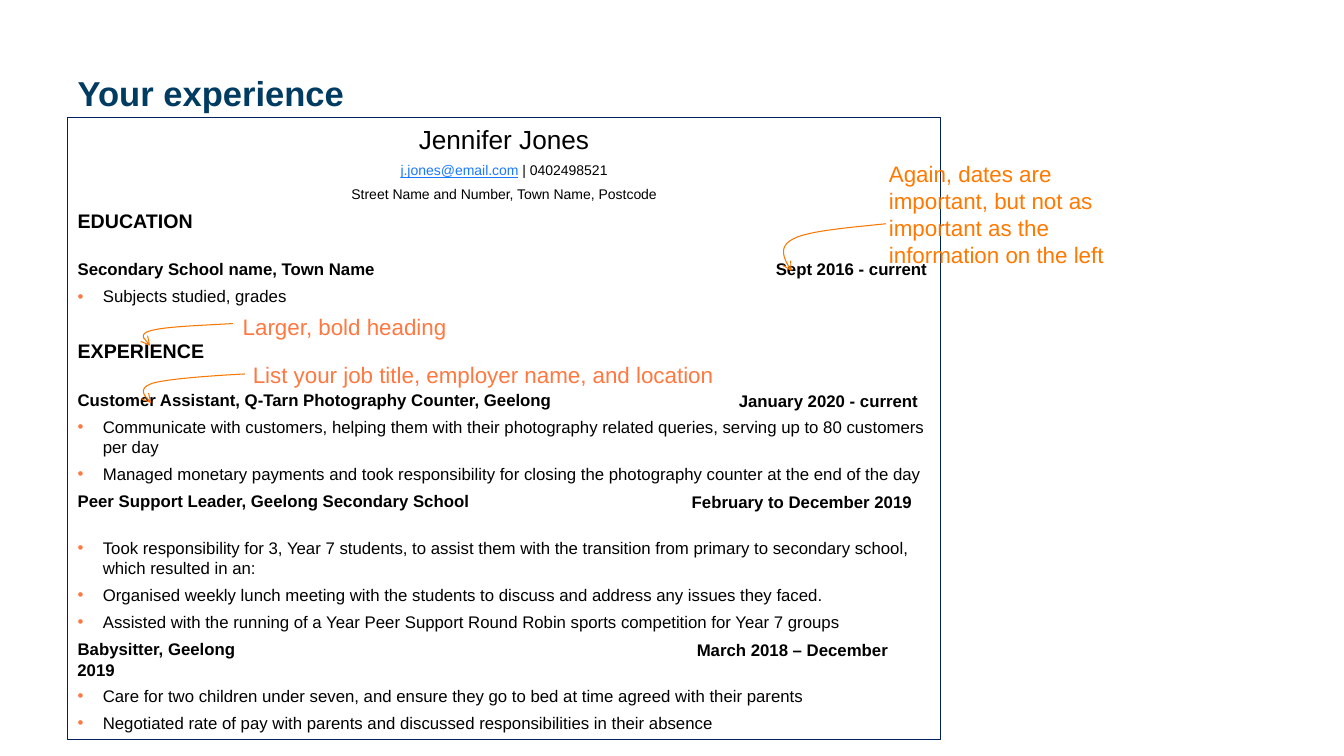
from dataclasses import dataclass

from lxml import etree
from pptx import Presentation
from pptx.dml.color import RGBColor
from pptx.enum import text
from pptx.oxml import ns
from pptx.util import Pt


@dataclass(frozen=True)
class Theme:
    font: str = "Arial"
    title: str = "003B61"
    ink: str = "000000"
    frame: str = "002060"
    email: str = "1979FF"
    bullet: str = "FF7840"
    note: str = "FF7840"
    date_note: str = "FF7900"
    arrow: str = "F97600"
    title_size: float = 24.7
    name_size: float = 18.7
    contact_size: float = 10
    heading_size: float = 14
    entry_size: float = 12
    note_size: float = 16
    line: float = 0.75
    gap: float = 4.95
    heading_gap: float = 19
    section_gap: float = 23.6
    line_gap: float = 18.8
    indent: float = 18


def apply(target, values):
    for name, value in values.items():
        setattr(target, name, value)


def add_xml(parent, tag, **attributes):
    return etree.SubElement(parent, ns.qn(tag), attributes)


def bezier(start, first, second, end, steps=12):
    """Return the points of a cubic curve after its start."""
    points = []
    for step in range(1, steps + 1):
        t = step / steps
        weights = ((1 - t) ** 3, 3 * t * (1 - t) ** 2, 3 * t * t * (1 - t), t ** 3)
        points.append(tuple(
            Pt(sum(w * p[axis] for w, p in zip(weights, (start, first, second, end))))
            for axis in (0, 1)))
    return points


class ResumePage:
    def __init__(self, deck, theme):
        self.theme = theme
        self.page = deck.slides.add_slide(deck.slide_layouts[1])
        self.resume = self.page.placeholders[1]
        self.paragraph_count = 0

    def place(self, box, left, top, width, height, anchor=text.MSO_ANCHOR.TOP):
        apply(box, {"left": Pt(left), "top": Pt(top),
                    "width": Pt(width), "height": Pt(height)})
        apply(box.text_frame, {"word_wrap": True, "vertical_anchor": anchor,
                               "auto_size": text.MSO_AUTO_SIZE.NONE})

    def span(self, para, words, size, color, bold=False, underline=False):
        span = para.add_run()
        span.text = words
        apply(span.font, {"name": self.theme.font, "size": Pt(size),
                          "bold": bold, "underline": underline})
        span.font.color.rgb = RGBColor.from_string(color)

    def title(self, words, *place):
        box = self.page.shapes.title
        self.place(box, *place, text.MSO_ANCHOR.MIDDLE)
        para = box.text_frame.paragraphs[0]
        para.alignment = text.PP_ALIGN.LEFT
        self.span(para, words, self.theme.title_size, self.theme.title, bold=True)

    def frame(self, *place):
        self.place(self.resume, *place)
        self.resume.line.color.rgb = RGBColor.from_string(self.theme.frame)
        self.resume.line.width = Pt(self.theme.line)

    def paragraph(self, before=None, align=text.PP_ALIGN.LEFT, bullet=False):
        frame = self.resume.text_frame
        first = self.paragraph_count == 0
        para = frame.paragraphs[0] if first else frame.add_paragraph()
        self.paragraph_count += 1
        space = self.theme.gap if before is None else before
        apply(para, {"alignment": align, "space_before": Pt(0 if first else space)})
        indent = Pt(self.theme.indent) if bullet else 0
        properties = para._p.get_or_add_pPr()
        properties.set("marL", str(indent))
        properties.set("indent", str(-indent))
        if bullet:
            color = add_xml(properties, "a:buClr")
            add_xml(color, "a:srgbClr", val=self.theme.bullet)
            add_xml(properties, "a:buFont", typeface=self.theme.font)
            add_xml(properties, "a:buChar", char="•")
        else:
            add_xml(properties, "a:buNone")
        return para

    def contact(self, name, email, phone, address):
        theme = self.theme
        center = text.PP_ALIGN.CENTER
        self.span(self.paragraph(align=center), name, theme.name_size, theme.ink)
        para = self.paragraph(align=center)
        self.span(para, email, theme.contact_size, theme.email, underline=True)
        self.span(para, f" | {phone}", theme.contact_size, theme.ink)
        self.span(self.paragraph(align=center), address, theme.contact_size, theme.ink)

    def heading(self, words, before=None):
        self.span(self.paragraph(before), words,
                  self.theme.heading_size, self.theme.ink, bold=True)

    def entry(self, role, bullets, before=None, bullets_before=None):
        theme = self.theme
        self.span(self.paragraph(before), role, theme.entry_size, theme.ink, bold=True)
        for index, words in enumerate(bullets):
            para = self.paragraph(None if index else bullets_before, bullet=True)
            self.span(para, words, theme.entry_size, theme.ink)

    def dates(self, lines, left, top):
        """Put dates on an entry's row; further lines return to the frame's left edge."""
        theme = self.theme
        box = self.page.shapes.add_textbox(0, 0, 0, 0)
        self.place(box, 48.24, top, 623.52, 7.2 + 13.8 * len(lines))
        para = box.text_frame.paragraphs[0]
        properties = para._p.get_or_add_pPr()
        properties.set("marL", "0")
        properties.set("indent", str(Pt(left)))
        for index, line in enumerate(lines):
            if index:
                para.add_line_break()
            self.span(para, line, theme.entry_size, theme.ink, bold=True)

    def note(self, words, color, *place):
        box = self.page.shapes.add_textbox(0, 0, 0, 0)
        self.place(box, *place)
        self.span(box.text_frame.paragraphs[0], words, self.theme.note_size, color)

    def arrow(self, tip, *curve):
        """Draw two joined curves with an arrowhead at the tip."""
        points = bezier(tip, *curve[:3]) + bezier(*curve[2:])
        builder = self.page.shapes.build_freeform(Pt(tip[0]), Pt(tip[1]))
        builder.add_line_segments(points, close=False)
        arrow = builder.convert_to_shape()
        arrow.shadow.inherit = False
        arrow.fill.background()
        arrow.line.color.rgb = RGBColor.from_string(self.theme.arrow)
        arrow.line.width = Pt(self.theme.line)
        add_xml(arrow.line._get_or_add_ln(), "a:headEnd", type="arrow")


def main():
    deck = Presentation()
    apply(deck, {"slide_width": Pt(960), "slide_height": Pt(540)})
    theme = Theme()
    page = ResumePage(deck, theme)

    page.title("Your experience", 48.24, 20.88, 722.16, 90)
    page.frame(48.24, 84.24, 623.52, 444.24)
    page.contact("Jennifer Jones", "j.jones@email.com", "0402498521",
                 "Street Name and Number, Town Name, Postcode")
    page.heading("EDUCATION")
    page.entry("Secondary School name, Town Name",
               ["Subjects studied, grades"], before=theme.heading_gap)
    page.heading("EXPERIENCE", before=theme.section_gap)
    page.entry("Customer Assistant, Q-Tarn Photography Counter, Geelong", [
        "Communicate with customers, helping them with their photography "
        "related queries, serving up to 80 customers per day",
        "Managed monetary payments and took responsibility for closing the "
        "photography counter at the end of the day",
    ], before=theme.heading_gap)
    page.entry("Peer Support Leader, Geelong Secondary School", [
        "Took responsibility for 3, Year 7 students, to assist them with the "
        "transition from primary to secondary school, which resulted in an:",
        "Organised weekly lunch meeting with the students to discuss and "
        "address any issues they faced.",
        "Assisted with the running of a Year Peer Support Round Robin sports "
        "competition for Year 7 groups",
    ], bullets_before=theme.line_gap)
    page.entry("Babysitter, Geelong", [
        "Care for two children under seven, and ensure they go to bed at time "
        "agreed with their parents",
        "Negotiated rate of pay with parents and discussed responsibilities in "
        "their absence",
    ], bullets_before=theme.line_gap)

    page.dates(["Sept 2016 - current"], 498.8, 181.6)
    page.dates(["January 2020 - current"], 472.4, 275.2)
    page.dates(["February to December 2019"], 438.8, 347.4)
    page.dates(["March 2018 – December", "2019"], 442.4, 453.1)

    page.arrow((107.28, 246.96), (102.96, 242.64), (98.64, 238.32), (108, 236.16),
               (118.08, 233.28), (142.56, 232.56), (166.32, 231.12))
    page.note("Larger, bold heading", theme.note, 166.32, 220.32, 161.28, 26.64)
    page.arrow((108, 288), (102.96, 282.96), (97.92, 277.2), (109.44, 273.6),
               (120.24, 270.72), (147.6, 268.56), (174.96, 267.12))
    page.note("List your job title, employer name, and location", theme.note,
              173.52, 254.16, 347.76, 26.64)
    page.arrow((565.2, 193.68), (560.16, 185.04), (555.12, 176.4), (566.64, 170.64),
               (577.44, 164.88), (605.52, 162.72), (632.88, 159.84))
    page.note("Again, dates are important, but not as important as the "
              "information on the left", theme.date_note, 627.84, 110.88, 169.2, 84.96)
    deck.save("out.pptx")


if __name__ == "__main__":
    main()
